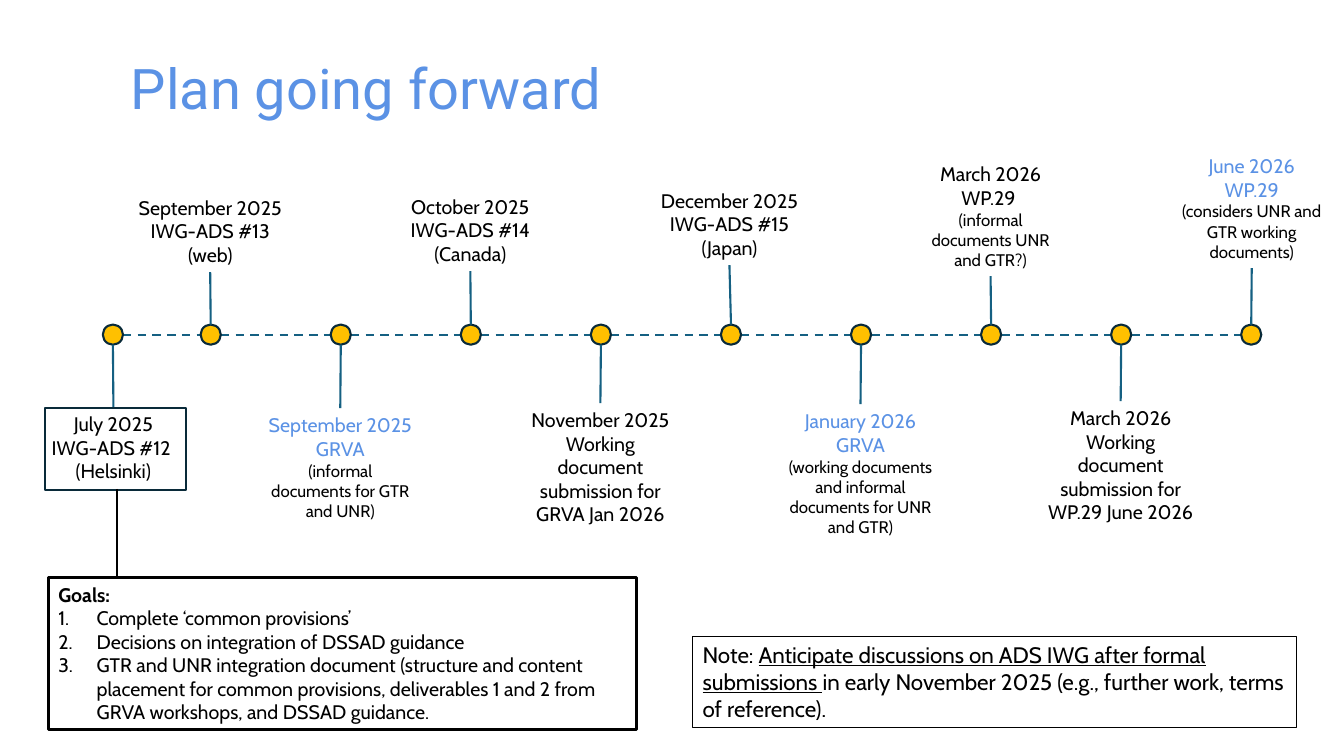
import pptx
import pptx.util
import pptx.dml.color
import pptx.enum.dml
import pptx.enum.shapes
import pptx.enum.text
import pptx.oxml.ns
import lxml.etree

Inches = pptx.util.Inches
Pt = pptx.util.Pt
RGBColor = pptx.dml.color.RGBColor
Shape = pptx.enum.shapes.MSO_SHAPE
Align = pptx.enum.text.PP_ALIGN
Anchor = pptx.enum.text.MSO_ANCHOR
qn = pptx.oxml.ns.qn

BLUE = RGBColor(0x5B, 0x92, 0xE5)
TEAL = RGBColor(0x15, 0x60, 0x82)
NAVY = RGBColor(0x09, 0x2A, 0x39)
GOLD = RGBColor(0xFF, 0xC0, 0x00)
BLACK = RGBColor(0, 0, 0)

deck = pptx.Presentation()
deck.slide_width = Inches(13.33)
deck.slide_height = Inches(7.5)
page = deck.slides.add_slide(deck.slide_layouts[6])


def add_line(x1, y1, x2, y2, color=TEAL, dashed=False):
    line = page.shapes.add_connector(pptx.enum.shapes.MSO_CONNECTOR.STRAIGHT,
                                     Inches(x1), Inches(y1), Inches(x2), Inches(y2))
    line.line.color.rgb = color
    line.line.width = Pt(1.5)
    if dashed:
        line.line.dash_style = pptx.enum.dml.MSO_LINE.DASH
    lxml.etree.SubElement(line._element.spPr, qn("a:effectLst"))


def add_outline(kind, left, top, width, height, color, weight, fill=None):
    box = page.shapes.add_shape(kind, Inches(left), Inches(top), Inches(width), Inches(height))
    box.shadow.inherit = False
    if fill is None:
        box.fill.background()
    else:
        box.fill.solid()
        box.fill.fore_color.rgb = fill
    box.line.color.rgb = color
    box.line.width = Pt(weight)
    box.text_frame.word_wrap = True
    box.text_frame.vertical_anchor = Anchor.TOP
    return box


# Title
title = page.shapes.add_textbox(Inches(1.2), Inches(0.26), Inches(9), Inches(1))
title.text_frame.word_wrap = True
title.text_frame.vertical_anchor = Anchor.BOTTOM
para = title.text_frame.paragraphs[0]
para.text = "Plan going forward"
para.line_spacing = 0.9
para.font.name = "Roboto"
para.font.size = Pt(40)
para.font.color.rgb = BLUE

# Milestones: left, top, width, height, heading colour, heading lines, detail
milestones = [
    (0.04, 4.04, 2.17, 0.81, BLACK, ["July 2025", "IWG-ADS #12 ", "(Helsinki)"], None),
    (0.74, 1.89, 2.69, 0.81, BLACK, ["September 2025", "IWG-ADS #13", "(web)"], None),
    (2.55, 4.05, 1.65, 1.18, BLUE, ["September 2025", "GRVA"],
     "(informal documents for GTR and UNR)"),
    (3.32, 1.88, 2.69, 0.81, BLACK, ["October 2025", "IWG-ADS #14", "(Canada)"], None),
    (5.08, 4.0, 1.75, 1.28, BLACK,
     ["November 2025", "Working document submission for GRVA Jan 2026"], None),
    (5.89, 1.82, 2.69, 0.81, BLACK, ["December 2025", "IWG-ADS #15", "(Japan)"], None),
    (7.66, 4.01, 1.75, 1.38, BLUE, ["January 2026", "GRVA"],
     "(working documents and informal documents for UNR and GTR)"),
    (9.0, 1.56, 1.65, 1.18, BLACK, ["March 2026", "WP.29 "],
     "(informal documents UNR and GTR?)"),
    (10.24, 3.98, 1.75, 1.28, BLACK,
     ["March 2026", "Working document submission for WP.29 June 2026"], None),
    (11.51, 1.48, 1.81, 1.18, BLUE, ["June 2026", "WP.29"],
     "(considers UNR and GTR working documents)"),
]
AXIS = 3.32
RADIUS = 0.1
centers = [1.12] + [2.09 + 1.29 * step for step in range(9)]

# Dashed time axis
for start, end in zip(centers, centers[1:]):
    add_line(start + RADIUS, AXIS, end - RADIUS, AXIS, dashed=True)

# Dots, stems and labels, alternating below and above the axis
for index, (center, milestone) in enumerate(zip(centers, milestones)):
    left, top, width, height, color, heading, detail = milestone
    add_outline(Shape.OVAL, center - RADIUS, AXIS - RADIUS, 2 * RADIUS, 2 * RADIUS,
                NAVY, 1.5, GOLD)
    middle = left + width / 2
    if index % 2 == 0:
        add_line(center, AXIS + RADIUS, middle, top)
    else:
        add_line(middle, top + height, center, AXIS - RADIUS)
    label = page.shapes.add_textbox(Inches(left), Inches(top), Inches(width), Inches(height))
    frame = label.text_frame
    frame.word_wrap = True
    rows = [(text, 14, color) for text in heading]
    if detail:
        rows.append((detail, 12, BLACK))
    for row, (text, size, row_color) in enumerate(rows):
        para = frame.paragraphs[0] if row == 0 else frame.add_paragraph()
        para.text = text
        para.alignment = Align.CENTER
        para.font.name = "Cabin"
        para.font.size = Pt(size)
        para.font.color.rgb = row_color

# Goals of the first meeting
goals = add_outline(Shape.RECTANGLE, 0.48, 5.73, 5.83, 1.51, BLACK, 2.25)
goal_texts = [
    "Goals:",
    "Complete ‘common provisions’",
    "Decisions on integration of DSSAD guidance",
    "GTR and UNR integration document (structure and content placement for common "
    "provisions, deliverables 1 and 2 from GRVA workshops, and DSSAD guidance.",
]
for row, text in enumerate(goal_texts):
    para = goals.text_frame.paragraphs[0] if row == 0 else goals.text_frame.add_paragraph()
    para.text = text
    para.alignment = Align.LEFT
    if row > 0:
        properties = para._p.get_or_add_pPr()
        properties.set("marL", str(Inches(0.38)))
        properties.set("indent", str(-Inches(0.38)))
        lxml.etree.SubElement(properties, qn("a:buFont"), typeface="+mj-lt")
        lxml.etree.SubElement(properties, qn("a:buAutoNum"), type="arabicPeriod")
    para.font.name = "Cabin"
    para.font.size = Pt(14)
    para.font.bold = row == 0
    para.font.color.rgb = BLACK

# Frame around the first meeting and its link to the goals
add_outline(Shape.RECTANGLE, 0.45, 4.05, 1.4, 0.81, NAVY, 1.5)
add_line(1.16, 4.85, 1.16, 5.73, BLACK)

# Note
note = add_outline(Shape.RECTANGLE, 6.87, 6.31, 5.99, 0.91, BLACK, 0.75)
para = note.text_frame.paragraphs[0]
para.alignment = Align.LEFT
for text, underlined in [
    ("Note: ", False),
    ("Anticipate discussions on ADS IWG after formal submissions ", True),
    ("in early November 2025 (e.g., further work, terms of reference).", False),
]:
    span = para.add_run()
    span.text = text
    span.font.underline = underlined
para.font.name = "Cabin"
para.font.size = Pt(16)
para.font.color.rgb = BLACK

deck.save("out.pptx")
